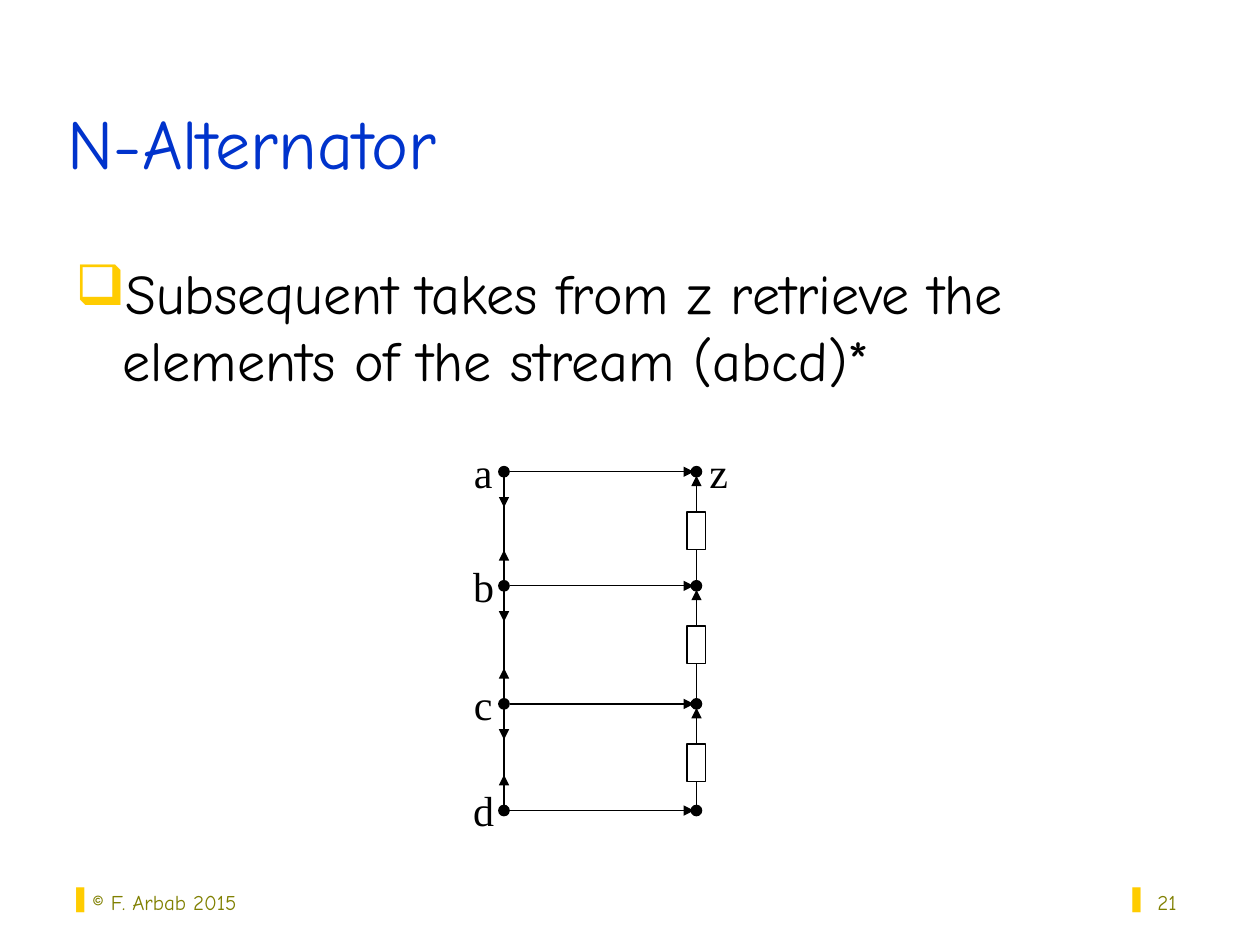
from lxml import etree
from pptx import Presentation
from pptx.dml.color import RGBColor
from pptx.enum.shapes import MSO_CONNECTOR, MSO_SHAPE
from pptx.enum.text import MSO_ANCHOR, PP_ALIGN
from pptx.oxml.ns import qn
from pptx.util import Cm, Pt

LINE = MSO_CONNECTOR.STRAIGHT
OVAL, RECT = MSO_SHAPE.OVAL, MSO_SHAPE.RECTANGLE
TOP, BOTTOM = MSO_ANCHOR.TOP, MSO_ANCHOR.BOTTOM
LEFT, MID, RIGHT = PP_ALIGN.LEFT, PP_ALIGN.CENTER, PP_ALIGN.RIGHT

HAND, SERIF = "Comic Neue", "Times New Roman"
BLACK, WHITE, BLUE, GOLD, OLIVE = "000000", "FFFFFF", "0033CC", "FFCC00", "808000"


def color(code):
    return RGBColor.from_string(code)


class Pen:
    def __init__(self, slide, ink=BLACK, width=0.75):
        self.slide, self.ink, self.width = slide, ink, width

    def text(self, words, box, size, ink, font=HAND, align=LEFT,
             anchor=TOP, wrap=True, bullet=None):
        """Add one paragraph; bullet is (sign, left margin, hang) in cm."""
        frame = self.slide.shapes.add_textbox(*map(Cm, box)).text_frame
        frame.word_wrap = wrap
        frame.vertical_anchor = anchor
        frame.text = words
        para = frame.paragraphs[0]
        para.alignment = align
        if bullet:
            self.bullet(para, *bullet)
        run = para.runs[0].font
        run.name, run.size = font, Pt(size)
        run.color.rgb = color(ink)

    def bullet(self, para, sign, margin, hang):
        props = para._p.get_or_add_pPr()
        props.set("marL", str(Cm(margin)))
        props.set("indent", str(-Cm(hang)))
        tint = etree.SubElement(props, qn("a:buClr"))
        etree.SubElement(tint, qn("a:srgbClr"), val=GOLD)
        etree.SubElement(props, qn("a:buChar"), char=sign)

    def shape(self, kind, x, y, wide, high, fill):
        """Add a shape centred on x, y."""
        item = self.slide.shapes.add_shape(
            kind, Cm(x - wide / 2), Cm(y - high / 2), Cm(wide), Cm(high))
        item.shadow.inherit = False
        item.fill.solid()
        item.fill.fore_color.rgb = color(fill)
        item.line.color.rgb = color(self.ink)
        item.line.width = Pt(self.width)

    def dot(self, x, y):
        self.shape(OVAL, x, y, 0.21, 0.21, self.ink)

    def line(self, x1, y1, x2, y2, arrow=True):
        item = self.slide.shapes.add_connector(LINE, Cm(x1), Cm(y1), Cm(x2), Cm(y2))
        item.line.color.rgb = color(self.ink)
        item.line.width = Pt(self.width)
        if arrow:
            etree.SubElement(item.line._ln, qn("a:tailEnd"), type="triangle")
        etree.SubElement(item._element.spPr, qn("a:effectLst"))

    def label(self, words, x, y):
        self.text(words, (x - 0.45, y, 0.9, 1.27), 24, BLACK, SERIF, MID, wrap=False)


def main():
    deck = Presentation()
    deck.slide_width, deck.slide_height = Cm(25.4), Cm(19.05)
    pen = Pen(deck.slides.add_slide(deck.slide_layouts[6]))

    pen.text("N-Alternator", (1.12, 0.64, 21.59, 3.18), 40, BLUE, anchor=BOTTOM)
    pen.text("Subsequent takes from z retrieve the elements of the stream (abcd)*",
             (1.27, 5.08, 22.71, 11.66), 32, BLACK, bullet=("❑", 0.95, 0.95))

    west, east = 10.16, 14.04
    rows = [9.51, 11.81, 14.19, 16.34]
    pen.line(west, rows[0], west, rows[-1], arrow=False)
    for name, y in zip("abcd", rows):
        pen.line(west + 0.13, y, east - 0.05, y)
        pen.dot(west, y)
        pen.dot(east, y)
        pen.label(name, 9.74, y - 0.64)
    pen.label("z", 14.49, rows[0] - 0.64)

    stub = 0.72
    for high, low in zip(rows, rows[1:]):
        pen.line(west, high, west, high + stub)
        pen.line(west, low, west, low - stub)
        pen.line(east, low, east, high + 0.08)
        pen.shape(RECT, east, high + 1.19, 0.38, 0.76, WHITE)

    foot, wide, high = 17.3, 5.28, 1.27
    pen.text("© F. Arbab 2015", (1.19, foot, wide, high), 12, OLIVE,
             anchor=BOTTOM, bullet=("▌", 0.36, 0.26))
    pen.text("21", (18.69, foot, wide, high), 12, OLIVE, align=RIGHT,
             anchor=BOTTOM, bullet=("▌", 0.5, 0.5))

    deck.save("out.pptx")


if __name__ == "__main__":
    main()
